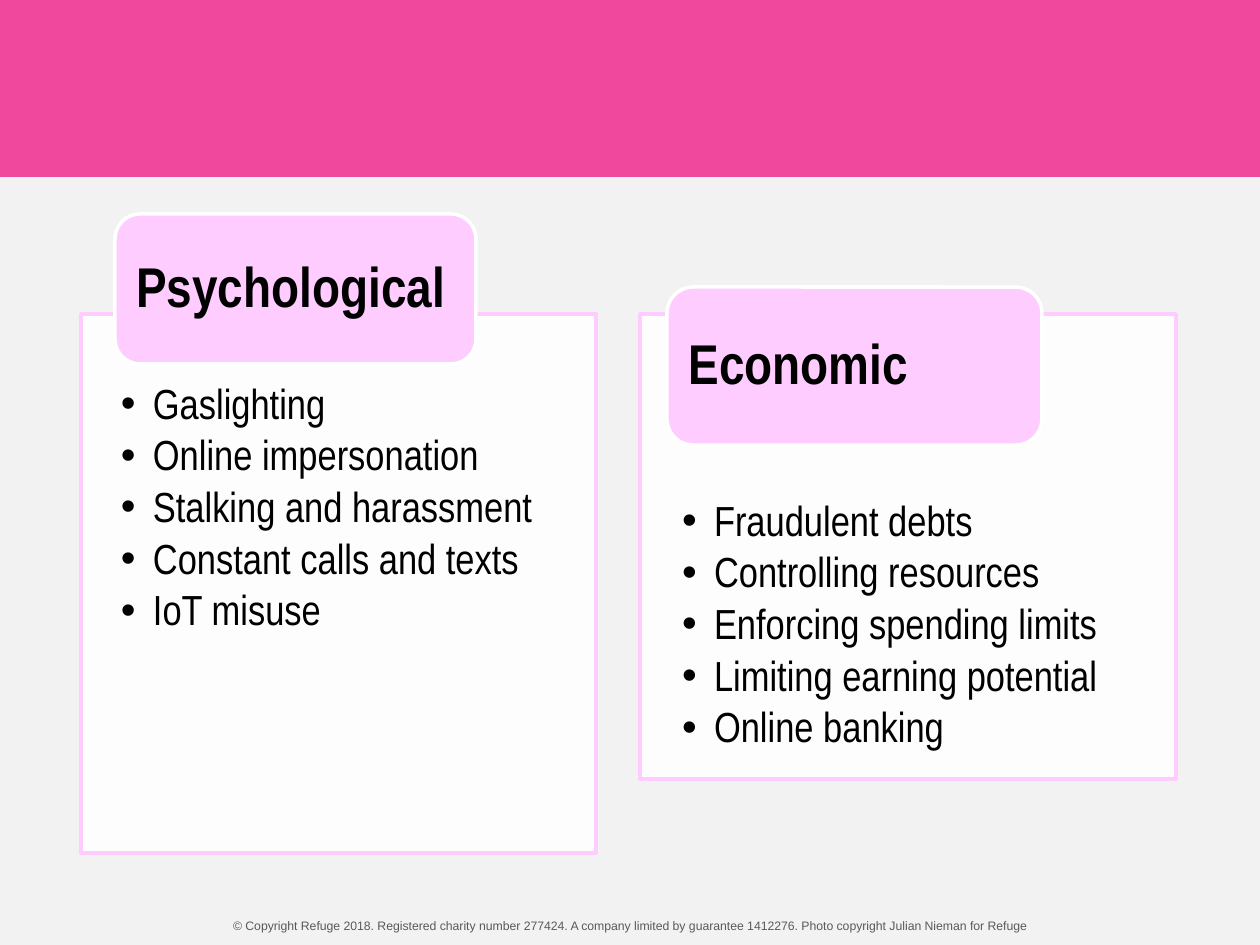
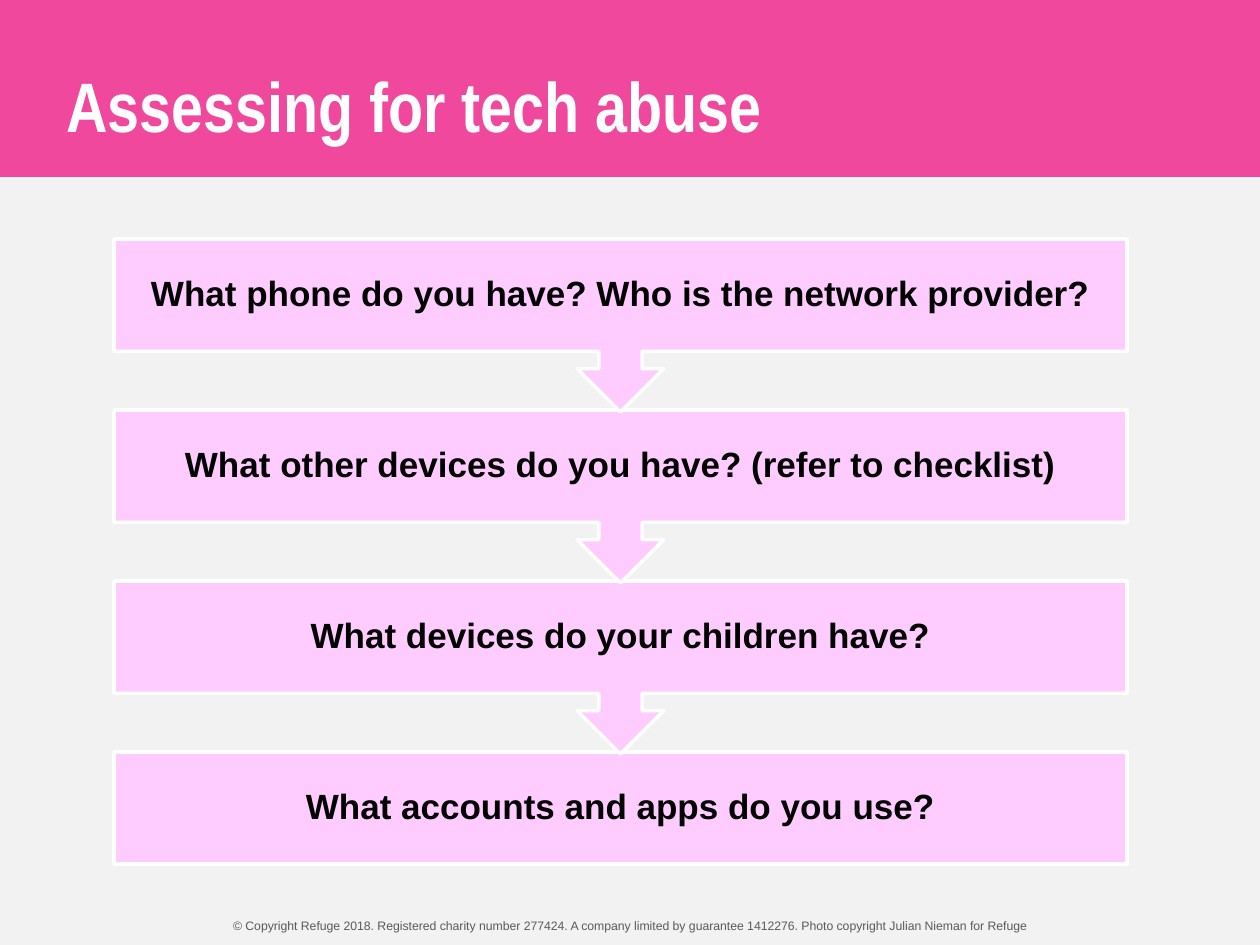
import pptx
import pptx.dml.color
import pptx.enum.shapes
import pptx.enum.text
import pptx.oxml
import pptx.oxml.ns
import pptx.util

RGBColor = pptx.dml.color.RGBColor
MSO_SHAPE = pptx.enum.shapes.MSO_SHAPE
PP_ALIGN = pptx.enum.text.PP_ALIGN
MSO_ANCHOR = pptx.enum.text.MSO_ANCHOR

GREY = RGBColor(0xF2, 0xF2, 0xF2)
PINK = RGBColor(0xEF, 0x48, 0x9D)
LIGHT_PINK = RGBColor(0xFF, 0xCC, 0xFF)
WHITE = RGBColor(0xFF, 0xFF, 0xFF)
BLACK = RGBColor(0, 0, 0)
FOOTER_GREY = RGBColor(0x59, 0x59, 0x59)

SANS, NARROW = "Arial", "Arial Narrow"
WIDTH, HEIGHT = 1260, 945
EMU_PER_INCH, PX_PER_INCH = 914400, 126
COPYRIGHT = ("© Copyright Refuge 2018. Registered charity number 277424. "
             "A company limited by guarantee 1412276. "
             "Photo copyright Julian Nieman for Refuge")


def px(n):
    return pptx.util.Emu(n * EMU_PER_INCH // PX_PER_INCH)


def add_xml(parent, tag, **attrs):
    child = pptx.oxml.parse_xml(f"<{tag} {pptx.oxml.ns.nsdecls('a')}/>")
    for name, value in attrs.items():
        child.set(name, str(value))
    parent.append(child)
    return child


class Deck:
    """Holds the presentation, its style and the current slide."""

    def __init__(self):
        self.prs = pptx.Presentation()
        self.prs.slide_width, self.prs.slide_height = px(WIDTH), px(HEIGHT)
        self.s = None

    def slide(self, title=None):
        self.s = self.prs.slides.add_slide(self.prs.slide_layouts[5 if title else 6])
        self.s.background.fill.solid()
        self.s.background.fill.fore_color.rgb = GREY
        self.shape(MSO_SHAPE.RECTANGLE, (0, 0, WIDTH, 175), PINK, PINK)
        self.footer()
        if title:
            self.title(title)

    def title(self, text):
        sp = self.s.shapes.title
        self.s.shapes._spTree.append(sp._element)  # in front of the band
        sp.left, sp.top, sp.width, sp.height = map(px, (54, 26, 932, 158))
        sp.text_frame.text = text
        sp.text_frame.vertical_anchor = MSO_ANCHOR.MIDDLE
        self.style(sp.text_frame.paragraphs[0], 40, NARROW, WHITE, bold=True)

    def footer(self):
        sp = self.s.shapes.add_textbox(*map(px, (0, 912, WIDTH, 28)))
        tf = sp.text_frame
        tf.word_wrap = True
        tf.text = COPYRIGHT
        self.style(tf.paragraphs[0], 7, SANS, FOOTER_GREY, align=PP_ALIGN.CENTER)

    def shape(self, kind, box, fill, line):
        sp = self.s.shapes.add_shape(kind, *map(px, box))
        sp.shadow.inherit = False
        sp.fill.solid()
        sp.fill.fore_color.rgb = fill
        sp.line.color.rgb = line
        sp.line.width = pptx.util.Pt(2)
        return sp

    def style(self, p, size, font, color, bold=False, align=PP_ALIGN.LEFT):
        p.alignment = align
        for r in p.runs:
            r.font.size = pptx.util.Pt(size)
            r.font.name = font
            r.font.bold = bold
            r.font.color.rgb = color

    def spacing(self, p, after):
        """Set tight lines and a space after in percent of the line."""
        p.line_spacing = 0.9
        add_xml(add_xml(p._p.get_or_add_pPr(), "a:spcAft"),
                "a:spcPct", val=after * 1000)

    def frame(self, sp, left, top, right, bottom, anchor=MSO_ANCHOR.MIDDLE):
        tf = sp.text_frame
        tf.word_wrap = True
        tf.vertical_anchor = anchor
        tf.margin_left, tf.margin_top = px(left), px(top)
        tf.margin_right, tf.margin_bottom = px(right), px(bottom)
        return tf

    def panel(self, box, items, side, top):
        """Draw a white panel with a bulleted list."""
        sp = self.shape(MSO_SHAPE.RECTANGLE, box, WHITE, LIGHT_PINK)
        color = sp._element.spPr.find(".//" + pptx.oxml.ns.qn("a:srgbClr"))
        add_xml(color, "a:alpha", val=90000)
        tf = self.frame(sp, side, top, side, 24, MSO_ANCHOR.TOP)
        tf.text = "\n".join(items)
        for p in tf.paragraphs:
            self.spacing(p, 15)
            pPr = p._p.get_or_add_pPr()
            indent = px(32)
            pPr.set("marL", str(indent))
            pPr.set("indent", str(-indent))
            add_xml(pPr, "a:buFont", typeface=SANS)
            add_xml(pPr, "a:buChar", char="•")
            self.style(p, 24, NARROW, BLACK)

    def tab(self, box, text):
        """Draw the rounded heading on a panel's top edge."""
        sp = self.shape(MSO_SHAPE.ROUNDED_RECTANGLE, box, LIGHT_PINK, WHITE)
        tf = self.frame(sp, 14, 0, 14, 0)
        tf.text = text
        p = tf.paragraphs[0]
        self.spacing(p, 35)
        self.style(p, 32, NARROW, BLACK, bold=True)

    def step(self, kind, box, text):
        sp = self.shape(kind, box, LIGHT_PINK, WHITE)
        tf = self.frame(sp, 20, 20, 20, 20)
        tf.text = text
        p = tf.paragraphs[0]
        self.spacing(p, 35)
        self.style(p, 20, SANS, BLACK, bold=True, align=PP_ALIGN.CENTER)


def abuse_types(deck):
    deck.slide()
    deck.panel((81, 314, 515, 539),
               ["Gaslighting", "Online impersonation", "Stalking and harassment",
                "Constant calls and texts", "IoT misuse"], side=40, top=69)
    deck.tab((115, 214, 361, 150), "Psychological")
    deck.panel((640, 314, 536, 465),
               ["Fraudulent debts", "Controlling resources",
                "Enforcing spending limits", "Limiting earning potential",
                "Online banking"], side=42, top=186)
    deck.tab((667, 287, 375, 158), "Economic")


def assessment(deck):
    deck.slide("Assessing for tech abuse")
    questions = ["What phone do you have? Who is the network provider?",
                 "What other devices do you have? (refer to checklist)",
                 "What devices do your children have?",
                 "What accounts and apps do you use?"]
    left, top, width, pitch = 114, 239, 1013, 171
    last = len(questions) - 1
    # From the last up, so that each arrow tip lies over the next box
    for i in range(last, -1, -1):
        if i == last:
            kind, height = MSO_SHAPE.RECTANGLE, 112
        else:
            kind, height = MSO_SHAPE.DOWN_ARROW_CALLOUT, 173
        deck.step(kind, (left, top + i * pitch, width, height), questions[i])


def main():
    deck = Deck()
    abuse_types(deck)
    assessment(deck)
    deck.prs.save("out.pptx")


if __name__ == "__main__":
    main()
